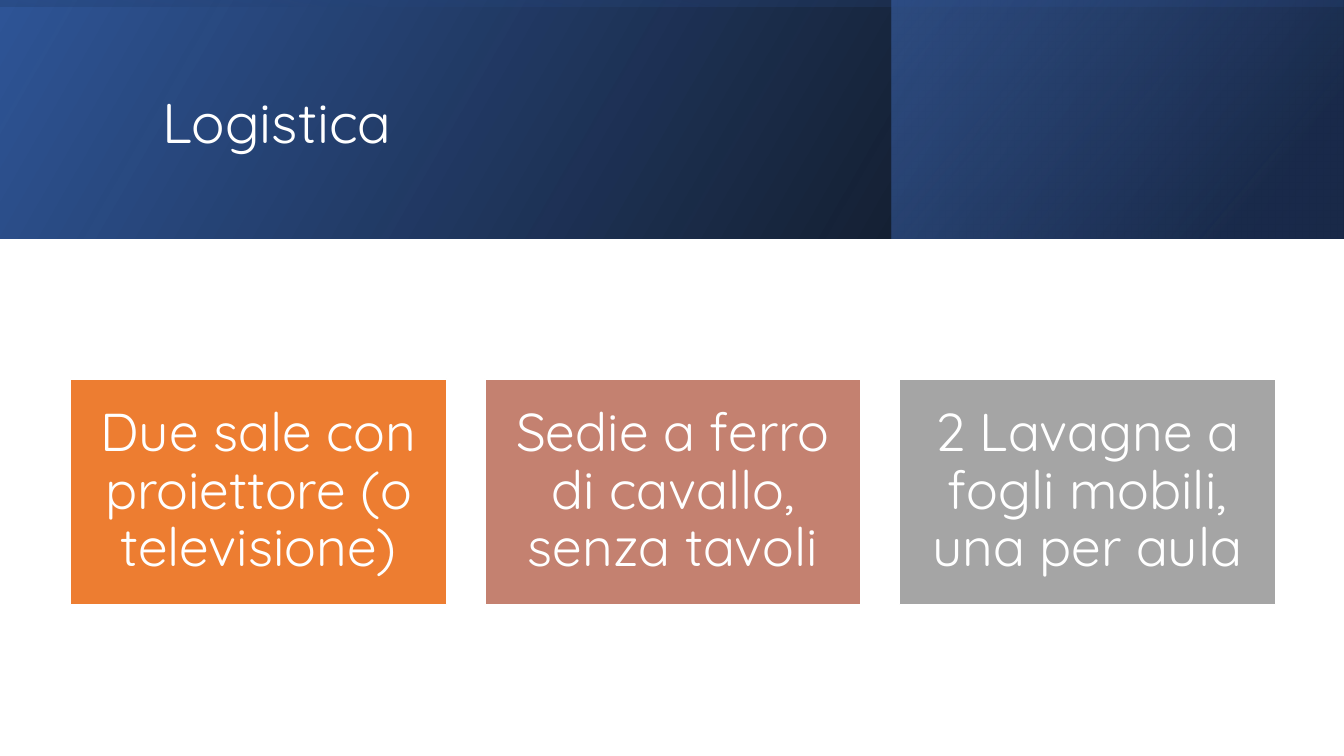
from pptx import Presentation
from pptx.dml.color import RGBColor
from pptx.enum.shapes import MSO_SHAPE
from pptx.enum.text import MSO_ANCHOR, PP_ALIGN
from pptx.oxml import parse_xml
from pptx.oxml.ns import nsdecls
from pptx.util import Inches, Pt

RECT = MSO_SHAPE.RECTANGLE
MIDDLE = MSO_ANCHOR.MIDDLE
LEFT, CENTER = PP_ALIGN.LEFT, PP_ALIGN.CENTER
FONT = "Quicksand"
WHITE = "FFFFFF"
BANDS = [
    ((0, 0, 13.33, 2.37), 0, 330, [(0, "000000", 96), (100, "2F5597", 100)]),
    ((8.84, 0, 4.48, 2.37), 0, 320, [(19, "203864", 68), (100, "4472C4", 48)]),
    ((5.48, -5.48, 2.37, 13.33), 270, 350, [(23, "2F5597", 16), (99, "000000", 45)]),
]
CARDS = [
    ("Due sale con proiettore (o televisione)", "ED7D31"),
    ("Sedie a ferro di cavallo, senza tavoli", "C48170"),
    ("2 Lavagne a fogli mobili, una per aula", "A5A5A5"),
]
CARD_LEFT, CARD_TOP, CARD_STEP = 0.7, 3.76, 4.11
CARD_WIDTH, CARD_HEIGHT = 3.73, 2.24


def color(code):
    """Return the colour for a hex string."""
    return RGBColor.from_string(code)


def apply(target, values):
    """Set each attribute in values on the target."""
    for name, value in values.items():
        setattr(target, name, value)


def add_rect(slide, box):
    """Add a rectangle without shadow."""
    shape = slide.shapes.add_shape(RECT, *map(Inches, box))
    shape.shadow.inherit = False
    return shape


def add_band(slide, box, turn, angle, stops):
    """Add a mirrored rectangle with a see-through gradient."""
    band = add_rect(slide, box)
    band.rotation = turn
    band.line.fill.background()
    marks = "".join(
        f'<a:gs pos="{pos * 1000}"><a:srgbClr val="{code}">'
        f'<a:alpha val="{alpha * 1000}"/></a:srgbClr></a:gs>'
        for pos, code, alpha in stops
    )
    props = band._element.spPr
    props.xfrm.set("flipH", "1")
    props.insert(2, parse_xml(
        f'<a:gradFill {nsdecls("a")} rotWithShape="1"><a:gsLst>{marks}</a:gsLst>'
        f'<a:lin ang="{angle * 60000}" scaled="0"/></a:gradFill>'
    ))


def write(shape, text, size, align, margins):
    """Write one white paragraph, centred in height."""
    frame = shape.text_frame
    apply(frame, {"word_wrap": True, "vertical_anchor": MIDDLE, **margins})
    para = frame.paragraphs[0]
    apply(para, {"alignment": align, "line_spacing": 0.9})
    run = para.add_run()
    run.text = text
    apply(run.font, {"name": FONT, "size": Pt(size)})
    run.font.color.rgb = color(WHITE)


def add_title(slide, text):
    """Add the slide heading."""
    box = slide.shapes.add_textbox(*map(Inches, (1.51, 0.38, 10.63, 1.72)))
    write(box, text, 40, LEFT, {})


def add_card(slide, left, text, fill):
    """Add a filled card with centred text."""
    card = add_rect(slide, (left, CARD_TOP, CARD_WIDTH, CARD_HEIGHT))
    card.fill.solid()
    card.fill.fore_color.rgb = color(fill)
    card.line.color.rgb = color(WHITE)
    card.line.width = Pt(1)
    sides = ("left", "top", "right", "bottom")
    margins = {f"margin_{side}": Inches(0.16) for side in sides}
    write(card, text, 38, CENTER, margins)


def main():
    """Build the slide and save it."""
    deck = Presentation()
    apply(deck, {"slide_width": Inches(13.33), "slide_height": Inches(7.5)})
    slide = deck.slides.add_slide(deck.slide_layouts[6])
    for band in BANDS:
        add_band(slide, *band)
    add_title(slide, "Logistica")
    for index, (text, fill) in enumerate(CARDS):
        add_card(slide, CARD_LEFT + index * CARD_STEP, text, fill)
    deck.save("out.pptx")


if __name__ == "__main__":
    main()
